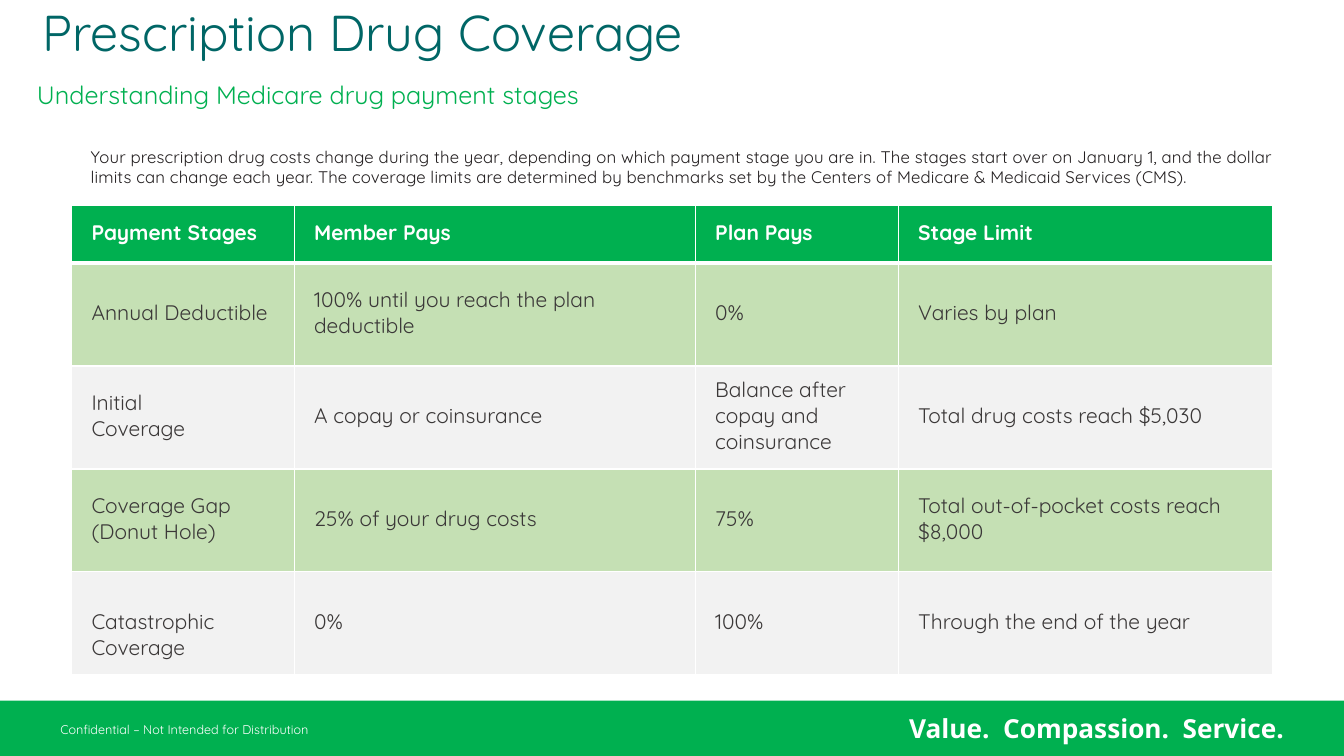
"""Build the slide on Medicare prescription drug payment stages."""
from dataclasses import dataclass

from lxml import etree
from pptx import Presentation
from pptx.dml.color import RGBColor
from pptx.enum.shapes import MSO_SHAPE
from pptx.enum.text import MSO_ANCHOR, MSO_AUTO_SIZE, PP_ALIGN
from pptx.oxml.ns import qn
from pptx.slide import Slide
from pptx.table import _Cell
from pptx.text.text import TextFrame, _Paragraph
from pptx.util import Pt

RECTANGLE = MSO_SHAPE.RECTANGLE
MIDDLE = MSO_ANCHOR.MIDDLE
GROW = MSO_AUTO_SIZE.SHAPE_TO_FIT_TEXT
LEFT, CENTER = PP_ALIGN.LEFT, PP_ALIGN.CENTER

GREEN = RGBColor(0x00, 0xB0, 0x50)
TEAL = RGBColor(0x00, 0x66, 0x66)
WHITE = RGBColor(0xFF, 0xFF, 0xFF)
INK = RGBColor(0x23, 0x1F, 0x20)
CHARCOAL = RGBColor(0x3B, 0x38, 0x38)
LIGHT_GREEN = RGBColor(0xC5, 0xE0, 0xB4)
LIGHT_GRAY = RGBColor(0xF2, 0xF2, 0xF2)

BODY_FONT = "Quicksand"
CELL_SIZE = 15
HEADER_HEIGHT, STAGE_HEIGHT = 41, 73.5
COLUMN_WIDTHS = (159, 286.5, 145, 267.5)
LAST_STAGE_INSET = 18.75


@dataclass(frozen=True)
class Label:
    """A text box with one run of text; lengths in points."""

    text: str
    left: float
    top: float
    width: float
    height: float
    size: float
    color: RGBColor
    font: str = BODY_FONT
    bold: bool = False
    align: PP_ALIGN = LEFT
    inset_x: float = 7.2
    inset_y: float = 3.6
    tracking: int = 0


@dataclass(frozen=True)
class Stage:
    """A table row; each line break in a cell starts a paragraph."""

    name: str
    member_pays: str
    plan_pays: str
    limit: str


LABELS = (
    Label("Value.  Compassion.  Service.", 640, 504, 299.5, 33, 18.7, WHITE,
          font="Open Sans", bold=True, inset_x=9.4, inset_y=5),
    Label("Confidential – Not Intended for Distribution", 36, 512, 250, 18, 9, WHITE),
    Label("Understanding Medicare drug payment stages", -20, 53.3, 480, 29, 18, GREEN,
          align=CENTER),
    Label("Your prescription drug costs change during the year, depending on which payment "
          "stage you are in. The stages start over on January 1, and the dollar limits can "
          "change each year. The coverage limits are determined by benchmarks set by the "
          "Centers of Medicare & Medicaid Services (CMS).",
          57.6, 101.5, 864.7, 36, 12, INK, tracking=10),
)

STAGES = (
    Stage("Payment Stages", "Member Pays", "Plan Pays", "Stage Limit"),
    Stage("Annual Deductible", "100% until you reach the plan deductible", "0%",
          "Varies by plan"),
    Stage("Initial\nCoverage", "A copay or coinsurance",
          "Balance after copay and coinsurance", "Total drug costs reach $5,030"),
    Stage("Coverage Gap\n(Donut Hole)", "25% of your drug costs", "75%",
          "Total out-of-pocket costs reach\n$8,000"),
    Stage("Catastrophic\nCoverage", "0%", "100%", "Through the end of the year"),
)


def add_run(p: _Paragraph, text: str, size: float, color: RGBColor,
            font: str = BODY_FONT, bold: bool = False, tracking: int = 0) -> None:
    """Add one formatted run to a paragraph."""
    r = p.add_run()
    r.text = text
    r.font.name = font
    r.font.size = Pt(size)
    r.font.bold = bold
    r.font.color.rgb = color
    if tracking:
        r._r.get_or_add_rPr().set("spc", str(tracking))


def add_label(s: Slide, label: Label) -> None:
    """Draw a label as a text box."""
    sp = s.shapes.add_textbox(Pt(label.left), Pt(label.top), Pt(label.width), Pt(label.height))
    tf = sp.text_frame
    tf.word_wrap = True
    tf.margin_left = tf.margin_right = Pt(label.inset_x)
    tf.margin_top = tf.margin_bottom = Pt(label.inset_y)
    p = tf.paragraphs[0]
    p.alignment = label.align
    add_run(p, label.text, label.size, label.color, label.font, label.bold, label.tracking)


def add_band(s: Slide) -> None:
    """Draw the green footer band."""
    sp = s.shapes.add_shape(RECTANGLE, Pt(0), Pt(500.4), Pt(960), Pt(39.6))
    sp.shadow.inherit = False
    sp.fill.solid()
    sp.fill.fore_color.rgb = GREEN
    sp.line.fill.background()


def fill_title(s: Slide) -> None:
    """Place and format the slide title."""
    sp = s.shapes.title
    sp.left, sp.top, sp.width, sp.height = Pt(23), Pt(1.4), Pt(802), Pt(47.5)
    tf = sp.text_frame
    tf.word_wrap = True
    tf.auto_size = GROW
    tf.vertical_anchor = MIDDLE
    p = tf.paragraphs[0]
    p.alignment = LEFT
    p.line_spacing = 0.9
    add_run(p, "Prescription Drug Coverage", 36, TEAL)


def set_borders(cell: _Cell, top: float, bottom: float) -> None:
    """Give a cell white borders, one point wide at the sides."""
    tc_pr = cell._tc.get_or_add_tcPr()
    for side, width in (("L", 1), ("R", 1), ("T", top), ("B", bottom)):
        ln = etree.SubElement(tc_pr, qn(f"a:ln{side}"), w=str(Pt(width)))
        fill = etree.SubElement(ln, qn("a:solidFill"))
        etree.SubElement(fill, qn("a:srgbClr"), val=str(WHITE))


def write_lines(tf: TextFrame, text: str, color: RGBColor, bold: bool) -> None:
    """Write each line of a cell as a paragraph."""
    for i, line in enumerate(text.split("\n")):
        p = tf.add_paragraph() if i else tf.paragraphs[0]
        add_run(p, line, CELL_SIZE, color, bold=bold)


def fill_cell(cell: _Cell, text: str, row: int) -> None:
    """Format and fill a table cell according to its row."""
    header = row == 0
    set_borders(cell, 3 if row == 1 else 1, 3 if header else 1)
    cell.fill.solid()
    cell.fill.fore_color.rgb = GREEN if header else (LIGHT_GRAY, LIGHT_GREEN)[row % 2]
    cell.vertical_anchor = MIDDLE
    cell.margin_left, cell.margin_right = Pt(14.2), Pt(5)
    cell.margin_top, cell.margin_bottom = Pt(0), Pt(2.8)
    write_lines(cell.text_frame, text, WHITE if header else CHARCOAL, header)


def add_stage_table(s: Slide) -> None:
    """Draw the table of payment stages."""
    height = HEADER_HEIGHT + STAGE_HEIGHT * (len(STAGES) - 1)
    table = s.shapes.add_table(len(STAGES), len(COLUMN_WIDTHS), Pt(51.2), Pt(147),
                               Pt(sum(COLUMN_WIDTHS)), Pt(height)).table
    for column, width in zip(table.columns, COLUMN_WIDTHS):
        column.width = Pt(width)
    for row, stage in enumerate(STAGES):
        table.rows[row].height = Pt(STAGE_HEIGHT if row else HEADER_HEIGHT)
        texts = (stage.name, stage.member_pays, stage.plan_pays, stage.limit)
        for col, text in enumerate(texts):
            fill_cell(table.cell(row, col), text, row)
    table.cell(len(STAGES) - 1, 0).margin_top = Pt(LAST_STAGE_INSET)


def main() -> None:
    """Build and save the presentation."""
    prs = Presentation()
    prs.slide_width, prs.slide_height = Pt(960), Pt(540)
    s = prs.slides.add_slide(prs.slide_layouts[5])
    add_band(s)
    fill_title(s)
    for label in LABELS:
        add_label(s, label)
    add_stage_table(s)
    prs.save("out.pptx")


if __name__ == "__main__":
    main()
